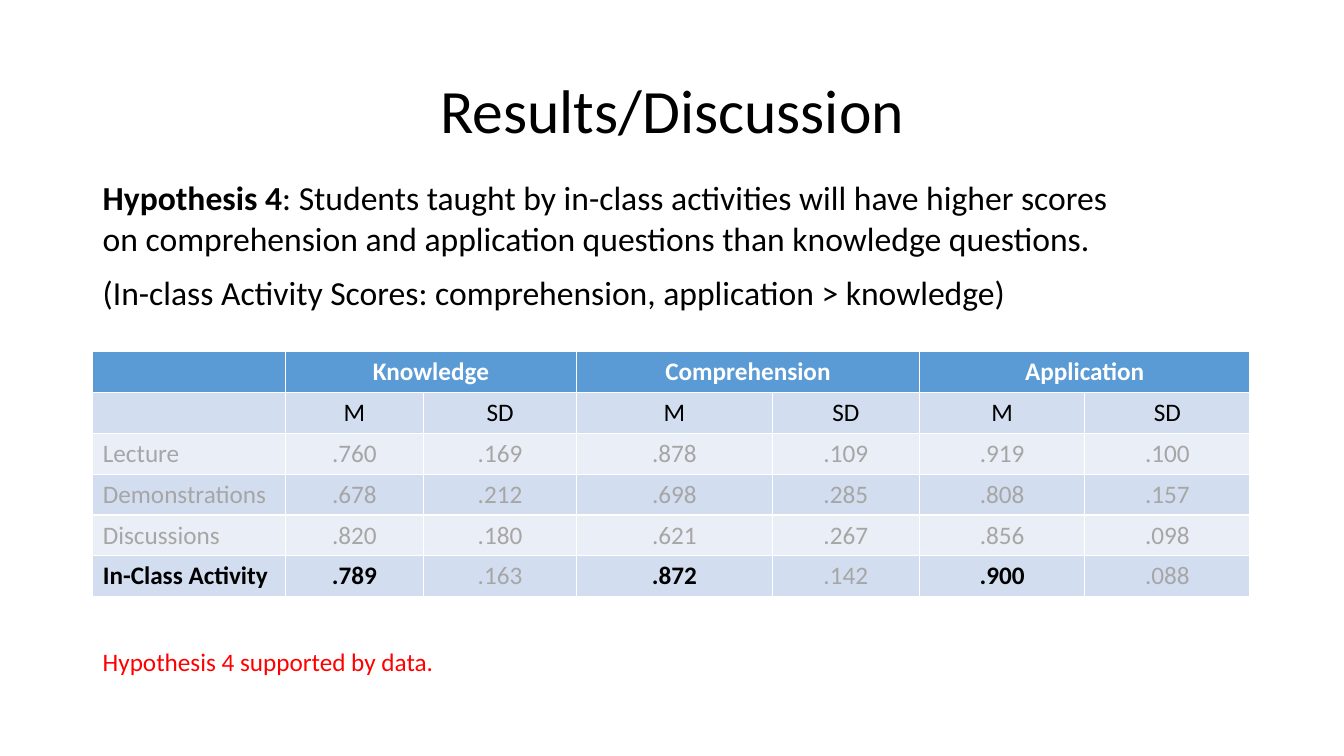
import pptx
import pptx.util
import pptx.dml.color
import pptx.enum.text
from pptx.util import Inches

BLACK = pptx.dml.color.RGBColor(0x00, 0x00, 0x00)
WHITE = pptx.dml.color.RGBColor(0xFF, 0xFF, 0xFF)
GRAY = pptx.dml.color.RGBColor(0xA6, 0xA6, 0xA6)
RED = pptx.dml.color.RGBColor(0xFF, 0x00, 0x00)
HEADER_BLUE = pptx.dml.color.RGBColor(0x5B, 0x9B, 0xD5)
BAND_DARK = pptx.dml.color.RGBColor(0xD2, 0xDE, 0xEF)
BAND_LIGHT = pptx.dml.color.RGBColor(0xEA, 0xEF, 0xF7)
CENTER = pptx.enum.text.PP_ALIGN.CENTER
LEFT = 0.92


def set_font(paragraph, size, color, bold=None):
    paragraph.font.name = "Calibri"
    paragraph.font.size = pptx.util.Pt(size)
    paragraph.font.color.rgb = color
    paragraph.font.bold = bold


def add_text_frame(top, width, height, wrap=True):
    """Add a text box at the left margin and return its text frame."""
    box = slide.shapes.add_textbox(
        Inches(LEFT), Inches(top), Inches(width), Inches(height))
    box.text_frame.word_wrap = wrap
    return box.text_frame


presentation = pptx.Presentation()
presentation.slide_width = Inches(13.33)
presentation.slide_height = Inches(7.5)
slide = presentation.slides.add_slide(presentation.slide_layouts[6])

# Title
title = add_text_frame(0.4, 11.5, 1.45)
title.vertical_anchor = pptx.enum.text.MSO_ANCHOR.MIDDLE
title_line = title.paragraphs[0]
title_line.text = "Results/Discussion"
title_line.alignment = CENTER
title_line.line_spacing = 0.9
set_font(title_line, 44, BLACK)

# Hypothesis
hypothesis = add_text_frame(1.71, 10.48, 1.45)
statement = hypothesis.paragraphs[0]
label = statement.add_run()
label.text = "Hypothesis 4"
label.font.bold = True
statement.add_run().text = (
    ": Students taught by in-class activities will have higher scores on "
    "comprehension and application questions than knowledge questions.")
prediction = hypothesis.add_paragraph()
prediction.text = "(In-class Activity Scores: comprehension, application > knowledge)"
for paragraph in hypothesis.paragraphs:
    paragraph.space_before = pptx.util.Pt(10)
    set_font(paragraph, 24, BLACK)

# Scores by teaching method and question type
COLUMN_WIDTHS = [1.91, 1.37, 1.52, 1.94, 1.46, 1.64, 1.64]
ROWS = [
    ["", "Knowledge", "", "Comprehension", "", "Application", ""],
    ["", "M", "SD", "M", "SD", "M", "SD"],
    ["Lecture", ".760", ".169", ".878", ".109", ".919", ".100"],
    ["Demonstrations", ".678", ".212", ".698", ".285", ".808", ".157"],
    ["Discussions", ".820", ".180", ".621", ".267", ".856", ".098"],
    ["In-Class Activity", ".789", ".163", ".872", ".142", ".900", ".088"],
]
HIGHLIGHT_ROW = len(ROWS) - 1
HIGHLIGHT_COLUMNS = (0, 1, 3, 5)

table = slide.shapes.add_table(
    len(ROWS), len(COLUMN_WIDTHS),
    Inches(LEFT), Inches(3.49), Inches(11.5), Inches(2.43)).table
for column, width in zip(table.columns, COLUMN_WIDTHS):
    column.width = Inches(width)
for first in (1, 3, 5):
    table.cell(0, first).merge(table.cell(0, first + 1))

for row_index, row in enumerate(ROWS):
    for column_index, text in enumerate(row):
        cell = table.cell(row_index, column_index)
        highlighted = row_index == HIGHLIGHT_ROW and column_index in HIGHLIGHT_COLUMNS
        if row_index == 0:
            fill, color = HEADER_BLUE, WHITE
        else:
            fill = BAND_DARK if row_index % 2 else BAND_LIGHT
            color = BLACK if row_index == 1 or highlighted else GRAY
        cell.fill.solid()
        cell.fill.fore_color.rgb = fill
        paragraph = cell.text_frame.paragraphs[0]
        if text:
            paragraph.text = text
        if column_index > 0:
            paragraph.alignment = CENTER
        set_font(paragraph, 18, color, bold=row_index == 0 or highlighted)

# Conclusion
conclusion = add_text_frame(6.36, 3.52, 0.4, wrap=False).paragraphs[0]
conclusion.text = "Hypothesis 4 supported by data."
set_font(conclusion, 18, RED)

presentation.save("out.pptx")
